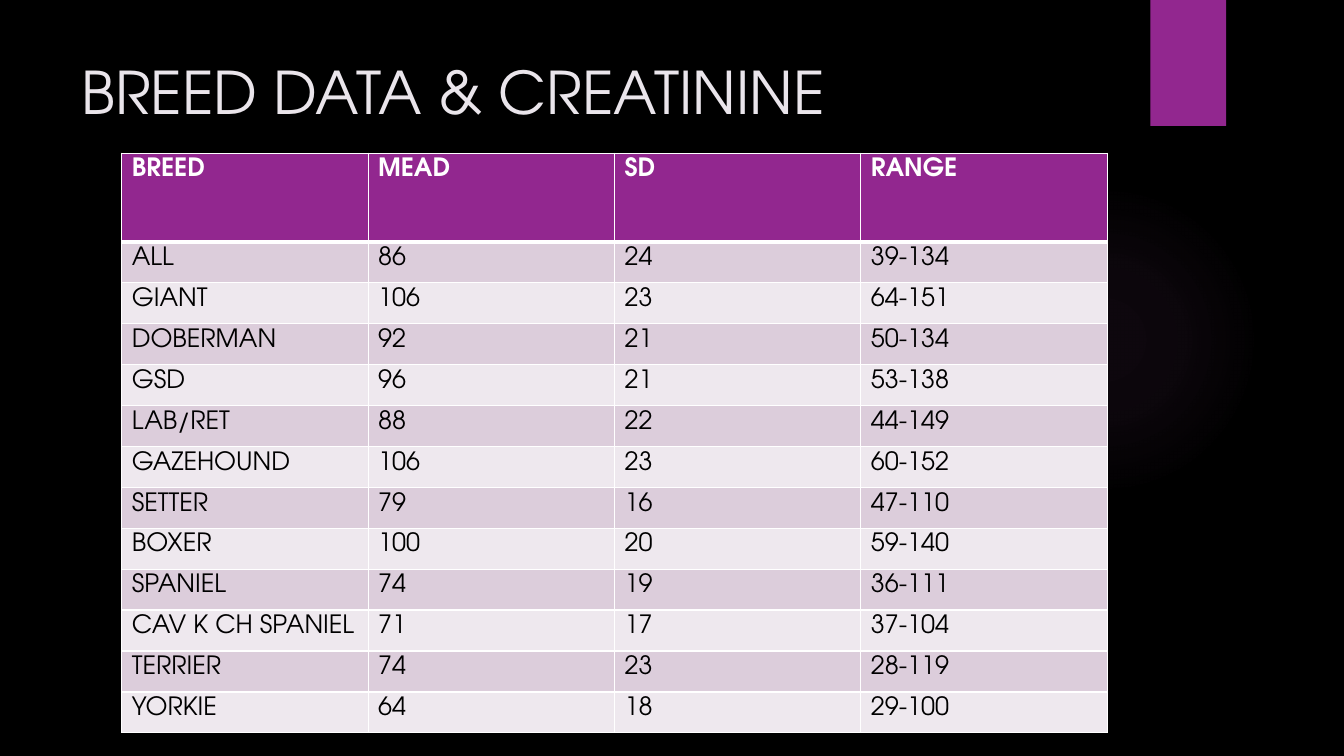
from lxml import etree
from pptx import Presentation
from pptx.dml.color import RGBColor
from pptx.enum.shapes import MSO_SHAPE
from pptx.enum.text import MSO_ANCHOR
from pptx.oxml import parse_xml
from pptx.oxml.ns import nsdecls, qn
from pptx.util import Pt

FONT = "TeX Gyre Adventor"
PURPLE = "92278F"
GLOW = "BA69B8"
WHITE = "FFFFFF"
BLACK = "000000"
BANDS = ("DCCDDB", "EEE8EE")
COLUMN_WIDTH = 176
HEADER_HEIGHT = 63.25
ROW_HEIGHT = 29.25

BREED_ROWS = [
    ("BREED", "MEAD", "SD", "RANGE"),
    ("ALL", "86", "24", "39-134"),
    ("GIANT", "106", "23", "64-151"),
    ("DOBERMAN", "92", "21", "50-134"),
    ("GSD", "96", "21", "53-138"),
    ("LAB/RET", "88", "22", "44-149"),
    ("GAZEHOUND", "106", "23", "60-152"),
    ("SETTER", "79", "16", "47-110"),
    ("BOXER", "100", "20", "59-140"),
    ("SPANIEL", "74", "19", "36-111"),
    ("CAV K CH SPANIEL", "71", "17", "37-104"),
    ("TERRIER", "74", "23", "28-119"),
    ("YORKIE", "64", "18", "29-100"),
]


def color(hex_value):
    return RGBColor.from_string(hex_value)


def set_solid(fill, hex_value):
    fill.solid()
    fill.fore_color.rgb = color(hex_value)


def add_run(paragraph, text, size, hex_value, bold=False):
    run = paragraph.add_run()
    run.text = text
    run.font.name = FONT
    run.font.size = Pt(size)
    run.font.bold = bold
    run.font.color.rgb = color(hex_value)


def add_plain_shape(slide, kind, left, top, width, height, hex_value):
    shape = slide.shapes.add_shape(kind, Pt(left), Pt(top), Pt(width), Pt(height))
    shape.shadow.inherit = False
    set_solid(shape.fill, hex_value)
    shape.line.fill.background()
    return shape


def fade_outwards(shape, hex_value, stops):
    """Replace the fill by a circular gradient; stops are (position, opacity) in percent."""
    stop_xml = "".join(
        f'<a:gs pos="{position * 1000}"><a:srgbClr val="{hex_value}">'
        f'<a:alpha val="{opacity * 1000}"/></a:srgbClr></a:gs>'
        for position, opacity in stops
    )
    gradient = parse_xml(
        f'<a:gradFill {nsdecls("a")} rotWithShape="1"><a:gsLst>{stop_xml}</a:gsLst>'
        '<a:path path="circle"><a:fillToRect l="50000" t="50000" r="50000" b="50000"/>'
        "</a:path></a:gradFill>"
    )
    properties = shape.element.spPr
    properties.replace(properties.find(qn("a:solidFill")), gradient)


def add_title(slide, text):
    box = slide.shapes.add_textbox(Pt(51), Pt(36), Pt(741), Pt(110))
    frame = box.text_frame
    frame.word_wrap = True
    frame.vertical_anchor = MSO_ANCHOR.TOP
    add_run(frame.paragraphs[0], text, 42, "EAE5EB")


def set_borders(cell, widths):
    """Draw white borders; widths are in points for left, right, top and bottom."""
    properties = cell._tc.get_or_add_tcPr()
    for index, (side, width) in enumerate(zip("LRTB", widths)):
        border = etree.Element(qn(f"a:ln{side}"), w=str(Pt(width)))
        fill = etree.SubElement(border, qn("a:solidFill"))
        etree.SubElement(fill, qn("a:srgbClr"), val=WHITE)
        properties.insert(index, border)


def fill_cell(cell, text, row_index):
    is_header = row_index == 0
    cell.margin_top = cell.margin_bottom = Pt(3.6)
    cell.vertical_anchor = MSO_ANCHOR.TOP
    set_solid(cell.fill, PURPLE if is_header else BANDS[(row_index - 1) % 2])
    set_borders(cell, (1, 1, 3 if row_index == 1 else 1, 3 if is_header else 1))
    add_run(cell.text_frame.paragraphs[0], text, 18, WHITE if is_header else BLACK, is_header)


def add_breed_table(slide, rows):
    column_count = len(rows[0])
    height = HEADER_HEIGHT + ROW_HEIGHT * (len(rows) - 1)
    table = slide.shapes.add_table(
        len(rows), column_count, Pt(87), Pt(109.5), Pt(COLUMN_WIDTH * column_count), Pt(height)
    ).table
    for column in table.columns:
        column.width = Pt(COLUMN_WIDTH)
    for row_index, values in enumerate(rows):
        table.rows[row_index].height = Pt(ROW_HEIGHT if row_index else HEADER_HEIGHT)
        for column_index, text in enumerate(values):
            fill_cell(table.cell(row_index, column_index), text, row_index)


def main():
    presentation = Presentation()
    presentation.slide_width = Pt(960)
    presentation.slide_height = Pt(540)
    slide = presentation.slides.add_slide(presentation.slide_layouts[6])
    set_solid(slide.background.fill, BLACK)

    glow = add_plain_shape(slide, MSO_SHAPE.OVAL, 677.5, 131.75, 221.75, 221.75, GLOW)
    fade_outwards(glow, GLOW, [(0, 7), (36, 6), (69, 0)])
    add_plain_shape(slide, MSO_SHAPE.RECTANGLE, 821.75, 0, 54, 90, PURPLE)
    add_title(slide, "BREED DATA & CREATININE")
    add_breed_table(slide, BREED_ROWS)

    presentation.save("out.pptx")


if __name__ == "__main__":
    main()
